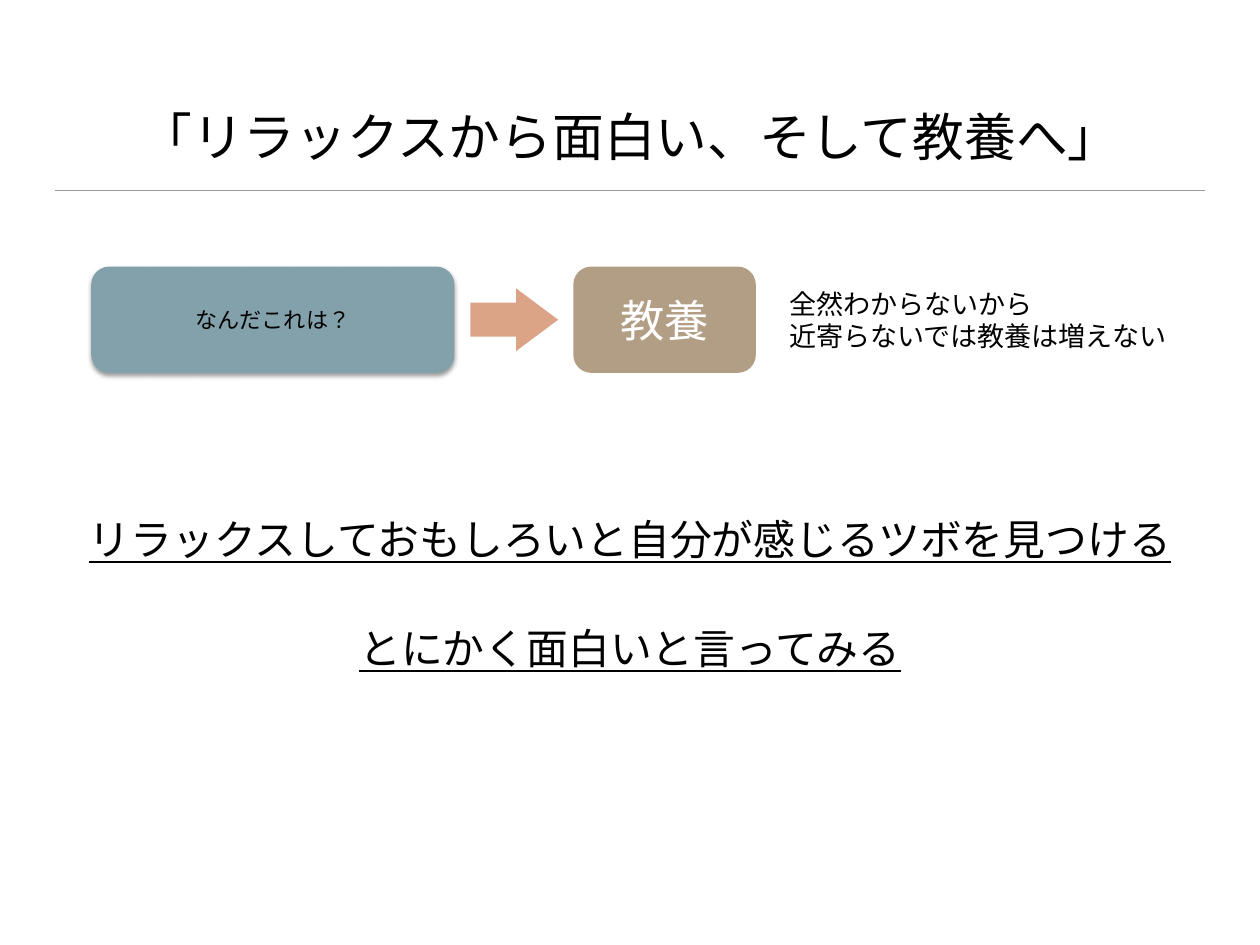
from collections import namedtuple
from dataclasses import dataclass

from lxml.etree import SubElement as Sub
from pptx import Presentation
from pptx.dml.color import RGBColor as Rgb
from pptx.enum.lang import MSO_LANGUAGE_ID as Lang
from pptx.enum.shapes import MSO_CONNECTOR as Link, MSO_SHAPE as Kind
from pptx.enum.text import MSO_ANCHOR as Anchor, MSO_AUTO_SIZE as Auto, PP_ALIGN as Align
from pptx.oxml.ns import qn
from pptx.util import Inches, Pt

Box = namedtuple("Box", "x y w h")


@dataclass(frozen=True)
class Theme:
    """Hold the colours, type sizes and font."""
    font: str = "Arial"
    ink: str = "000000"
    pale: str = "FFFFFF"
    rule: str = "9A9A9A"
    blue: str = "82A1AB"
    tan: str = "B29E85"
    peach: str = "DCA486"
    title: int = 42
    lead: int = 34
    key: int = 36
    note: int = 22
    small: int = 18


T = Theme()
WIDE, HIGH = Inches(14.22), Inches(10.67)


def place(box):
    """Turn percent shares of the slide into lengths."""
    return [round(part * side / 100) for part, side in zip(box, (WIDE, HIGH) * 2)]


def middle(box, x, w, h):
    """Give a part at offset x, centred on the height of its box."""
    return Box(box.x + x, box.y + (box.h - h) / 2, w, h)


def write(shape, text, size, color=T.ink, align=Align.CENTER,
          anchor=Anchor.MIDDLE, inset=0, wrap=True, line=False):
    """Put formatted text into a shape, one paragraph per line."""
    frame = shape.text_frame
    frame.text = text
    frame.auto_size = Auto.NONE if wrap else Auto.SHAPE_TO_FIT_TEXT
    frame.word_wrap = wrap
    frame.vertical_anchor = anchor
    frame.margin_left = frame.margin_right = Inches(inset)
    frame.margin_top = frame.margin_bottom = Inches(inset)
    for para in frame.paragraphs:
        para.alignment = align
        for run in para.runs:
            font = run.font
            font.name, font.size = T.font, Pt(size)
            font.color.rgb = Rgb.from_string(color)
            font.language_id = Lang.JAPANESE
            if line:
                font.underline = True


def label(slide, box, text, size, **style):
    """Add a text box that grows with its text."""
    write(slide.shapes.add_textbox(*place(box)), text, size,
          inset=0.06, wrap=False, **style)


def block(slide, kind, box, fill, adjust):
    """Add a flat shape without an outline."""
    shape = slide.shapes.add_shape(kind, *place(box))
    shape.shadow.inherit = False
    shape.fill.solid()
    shape.fill.fore_color.rgb = Rgb.from_string(fill)
    shape.line.fill.background()
    for i, value in enumerate(adjust):
        shape.adjustments[i] = value
    return shape


def shade(shape):
    """Give a shape a soft shadow below it."""
    list_ = shape.element.spPr.find(qn("a:effectLst"))
    outer = Sub(list_, qn("a:outerShdw"), blurRad=str(Pt(4)), dist=str(Pt(2)),
                dir="5400000", rotWithShape="0")
    color = Sub(outer, qn("a:srgbClr"), val=T.ink)
    Sub(color, qn("a:alpha"), val="40000")


def header(slide, box, text):
    """Set the title and the rule below it."""
    title = slide.shapes.title
    title.left, title.top, title.width, title.height = place(box._replace(h=14.34))
    write(title, text, T.title, anchor=Anchor.BOTTOM)
    x, y, w, h = place(box)
    rule = slide.shapes.add_connector(Link.STRAIGHT, x, y + h, x + w, y + h)
    rule.line.color.rgb = Rgb.from_string(T.rule)
    rule.line.width = Pt(1)
    Sub(rule.element.spPr, qn("a:effectLst"))


def flow(slide, box, ask, goal, note):
    """Lead from a question by an arrow to a goal and a note."""
    start = block(slide, Kind.ROUNDED_RECTANGLE, middle(box, 0, 28.83, box.h), T.blue, [0.17])
    shade(start)
    write(start, ask, T.small)
    block(slide, Kind.RIGHT_ARROW, middle(box, 30.1, 6.96, 6.65), T.peach, [0.54, 0.67])
    end = block(slide, Kind.ROUNDED_RECTANGLE, middle(box, 38.26, 14.49, box.h), T.tan, [0.17])
    write(end, goal, T.key, T.pale)
    label(slide, middle(box, 55, 30.87, 8.25), note, T.note, align=Align.LEFT)


def advice(slide, box, lines):
    """Stack underlined lines at an even pitch, centred in the box."""
    pitch = box.h / len(lines)
    for i, (text, share) in enumerate(lines):
        w = box.w * share
        spot = Box(box.x + (box.w - w) / 2, box.y + i * pitch, w, 5.55)
        label(slide, spot, text, T.lead, line=True)


def main():
    """Build and save the slide."""
    deck = Presentation()
    deck.slide_width, deck.slide_height = WIDE, HIGH
    slide = deck.slides.add_slide(deck.slide_layouts[5])
    header(slide, Box(4.36, 3.37, 91.25, 16.78), "「リラックスから面白い、そして教養へ」")
    flow(slide, Box(7.24, 28.21, 85.87, 11.25), "なんだこれは？", "教養",
         "全然わからないから\n近寄らないでは教養は増えない")
    advice(slide, Box(6.54, 54.27, 86.92, 23.06), [
        ("リラックスしておもしろいと自分が感じるツボを見つける", 1),
        ("とにかく面白いと言ってみる", 0.51)])
    deck.save("out.pptx")


if __name__ == "__main__":
    main()
